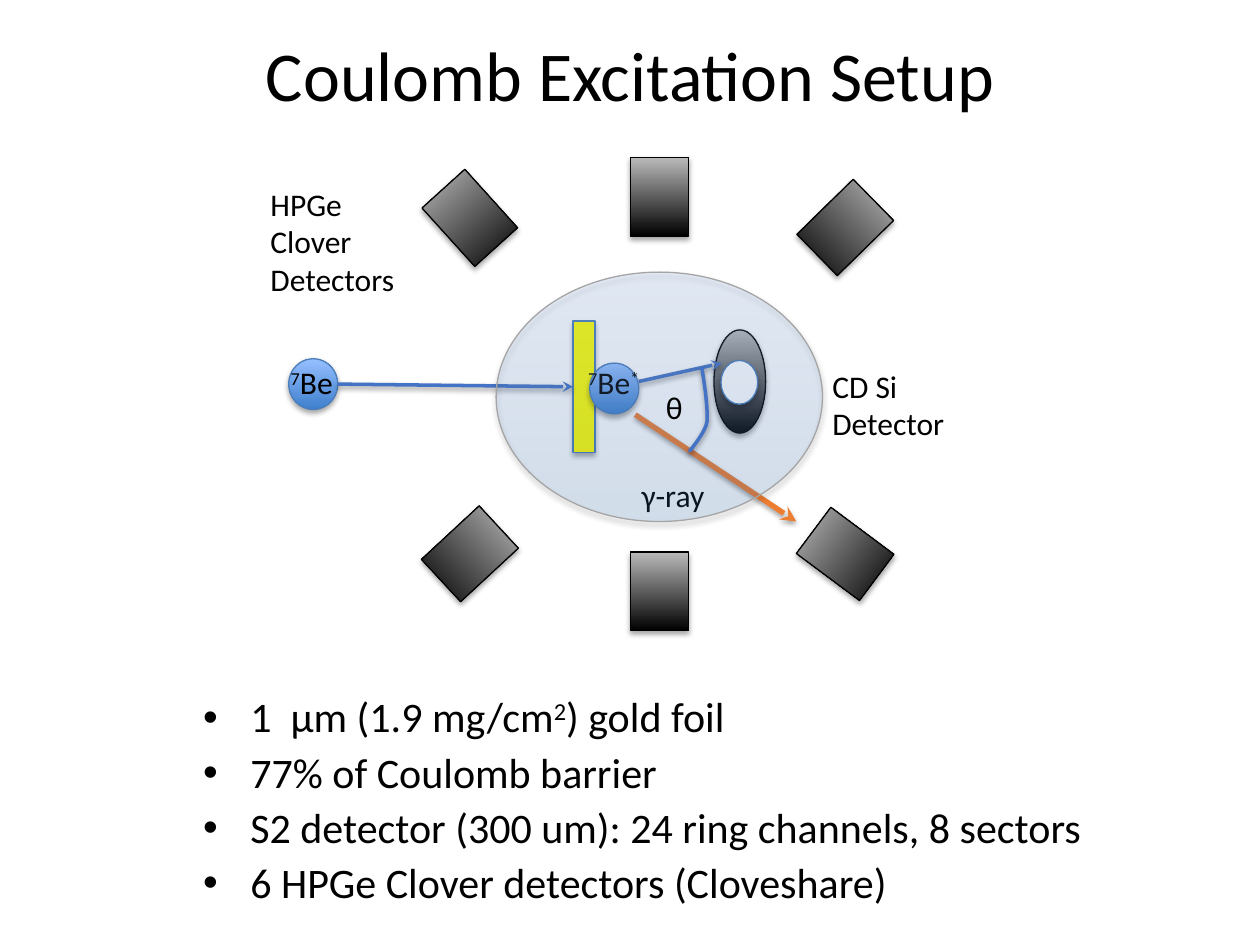
from lxml import etree
from pptx import Presentation
from pptx.dml.color import RGBColor
from pptx.enum.shapes import MSO_CONNECTOR, MSO_SHAPE
from pptx.enum.text import MSO_ANCHOR, PP_ALIGN
from pptx.oxml.ns import qn
from pptx.util import Pt

RECT, OVAL = MSO_SHAPE.RECTANGLE, MSO_SHAPE.OVAL
STRAIGHT = MSO_CONNECTOR.STRAIGHT
TOP, MIDDLE = MSO_ANCHOR.TOP, MSO_ANCHOR.MIDDLE
LEFT, CENTER = PP_ALIGN.LEFT, PP_ALIGN.CENTER
LEFT_SIDE = 1

COLORS = {
    "text": "000000", "shadow": "000000", "edge": "4A7DBA", "outline": "000000",
    "foil": "FFFF00", "hole": "FFFFFF", "beam": "4472C4", "gamma": "ED7D31",
    "chamber": "A5A5A5",
}
METAL = ("000000", "BABABA")
BLUE = ("3E7FCD", "96C0FF")


def bezier(points, steps=12):
    """Points along a cubic curve, without its start."""
    result = []
    for step in range(1, steps + 1):
        t = step / steps
        weights = ((1 - t) ** 3, 3 * t * (1 - t) ** 2, 3 * t * t * (1 - t), t ** 3)
        result.append(tuple(Pt(sum(w * p[axis] for w, p in zip(weights, points)))
                            for axis in (0, 1)))
    return result


class SlideBuilder:
    font_name = "Calibri"

    def __init__(self, page):
        self.page = page

    def color(self, name):
        return RGBColor.from_string(COLORS[name])

    def add_shadow(self, item, alpha=35, distance=1.8):
        properties = item._element.spPr
        effects = properties.find(qn("a:effectLst"))
        if effects is None:
            effects = etree.SubElement(properties, qn("a:effectLst"))
        outer = etree.SubElement(effects, qn("a:outerShdw"), blurRad=str(Pt(3.1)),
                                 dist=str(Pt(distance)), dir="5400000", rotWithShape="0")
        tone = etree.SubElement(outer, qn("a:srgbClr"), val=COLORS["shadow"])
        etree.SubElement(tone, qn("a:alpha"), val=str(alpha * 1000))

    def stroke(self, item, color, width):
        item.line.color.rgb = self.color(color)
        item.line.width = Pt(width)

    def shape(self, kind, place, fill, edge, rotation=0, alpha=None):
        """A tuple as fill is a gradient from bottom to top."""
        item = self.page.shapes.add_shape(kind, *map(Pt, place))
        item.rotation = rotation
        item.shadow.inherit = False
        if isinstance(fill, tuple):
            item.fill.gradient()
            item.fill.gradient_angle = 90
            for stop, tone in zip(item.fill.gradient_stops, fill):
                stop.color.rgb = RGBColor.from_string(tone)
        else:
            item.fill.solid()
            item.fill.fore_color.rgb = self.color(fill)
        if alpha is not None:
            for tone in item._element.spPr.find(qn("a:gradFill")).iter(qn("a:srgbClr")):
                etree.SubElement(tone, qn("a:alpha"), val=str(alpha * 1000))
        self.stroke(item, edge, 0.75)
        self.add_shadow(item)
        return item

    def arrow(self, start, end, color, width, target=None):
        item = self.page.shapes.add_connector(STRAIGHT, *map(Pt, start + end))
        if target is not None:
            item.end_connect(target, LEFT_SIDE)
        self.stroke(item, color, width)
        etree.SubElement(item.line._get_or_add_ln(), qn("a:tailEnd"), type="stealth")
        self.add_shadow(item, 38, 1.6)

    def curve(self, segments, color, width):
        start = tuple(map(Pt, segments[0][0]))
        builder = self.page.shapes.build_freeform(*start)
        for segment in segments:
            builder.add_line_segments(bezier(segment), close=False)
        item = builder.convert_to_shape()
        item.shadow.inherit = False
        item.fill.background()
        self.stroke(item, color, width)
        self.add_shadow(item, 38, 1.6)

    def text(self, place, lines, size=18, align=LEFT, anchor=TOP, bullet=False,
             spacing=1.0, before=0):
        """Each line is a list of runs; a run starting with ^ is superscript."""
        box = self.page.shapes.add_textbox(*map(Pt, place))
        frame = box.text_frame
        frame.word_wrap = True
        frame.vertical_anchor = anchor
        for index, runs in enumerate(lines):
            para = frame.paragraphs[0] if index == 0 else frame.add_paragraph()
            layout = {"alignment": align, "line_spacing": spacing,
                      "space_before": Pt(before if index else 0)}
            for name, value in layout.items():
                setattr(para, name, value)
            if bullet:
                properties = para._p.get_or_add_pPr()
                properties.set("marL", str(Pt(63)))
                properties.set("indent", str(Pt(-27)))
                etree.SubElement(properties, qn("a:buFont"), typeface="Arial")
                etree.SubElement(properties, qn("a:buChar"), char="•")
            for content in runs:
                span = para.add_run()
                span.text = content.removeprefix("^")
                for name, value in {"name": self.font_name, "size": Pt(size)}.items():
                    setattr(span.font, name, value)
                span.font.color.rgb = self.color("text")
                if content.startswith("^"):
                    span._r.get_or_add_rPr().set("baseline", "30000")


def main():
    deck = Presentation()
    deck.slide_width, deck.slide_height = Pt(720), Pt(540)
    page = deck.slides.add_slide(deck.slide_layouts[6])
    slide = SlideBuilder(page)

    # Title and facts
    slide.text((36, 0, 648, 90), [["Coulomb Excitation Setup"]], size=40,
               align=CENTER, anchor=MIDDLE, spacing=0.9)
    facts = [
        ["1  μm (1.9 mg/cm", "^2", ") gold foil"],
        ["77% of Coulomb barrier"],
        ["S2 detector (300 um): 24 ring channels, 8 sectors"],
        ["6 HPGe Clover detectors (Cloveshare)"],
    ]
    slide.text((73, 394.5, 556.5, 137.5), facts, size=24, bullet=True,
               spacing=0.9, before=5.6)

    # Beam onto the gold foil
    slide.shape(OVAL, (165, 205, 28, 29), BLUE, "edge")
    foil = slide.shape(RECT, (327.5, 183.5, 12.5, 75), "foil", "edge")
    slide.arrow((193, 219.5), (327.5, 221), "beam", 2, foil)

    # Silicon detector and scattered particle
    slide.shape(OVAL, (408, 188.5, 29.5, 59), METAL, "outline")
    slide.arrow((365, 218), (412.5, 207.5), "beam", 2)
    slide.shape(OVAL, (412, 206, 21, 25), "hole", "edge")

    # Clover detectors around the chamber: left, top, rotation
    clovers = [(252, 102, 317.9), (360.5, 90, 0), (466.5, 107.5, 45.6),
               (252, 294, 47.2), (360.5, 315.5, 0), (466.5, 294, 306.7)]
    for left, top, rotation in clovers:
        slide.shape(RECT, (left, top, 33, 45), METAL, "outline", rotation)

    # Excited nucleus and gamma ray
    slide.shape(OVAL, (337, 207.5, 28, 29), BLUE, "edge")
    slide.arrow((363, 237), (455, 298), "gamma", 3)

    # Labels
    labels = [
        ((159, 204, 104.5, 29), ["^7", "Be"]),
        ((468.5, 206, 115, 51), ["CD Si Detector"]),
        ((359.5, 268.5, 84, 29), ["γ-ray"]),
        ((329, 204, 54, 29), ["^7", "Be", "^*"]),
        ((147.5, 102, 91, 51), ["HPGe Clover Detectors"]),
    ]
    for place, runs in labels:
        slide.text(place, [runs])

    # Translucent chamber, then the scattering angle on top
    slide.shape(OVAL, (283.5, 155.5, 186.5, 142.5), BLUE, "chamber", alpha=17)
    slide.text((373.5, 218, 22, 29), [["θ"]])
    slide.curve([
        [(401, 210), (403, 222), (404.5, 233.5), (404, 241)],
        [(404, 241), (403, 248.5), (389, 263.5), (396, 255.5)],
    ], "beam", 2)

    deck.save("out.pptx")


if __name__ == "__main__":
    main()
